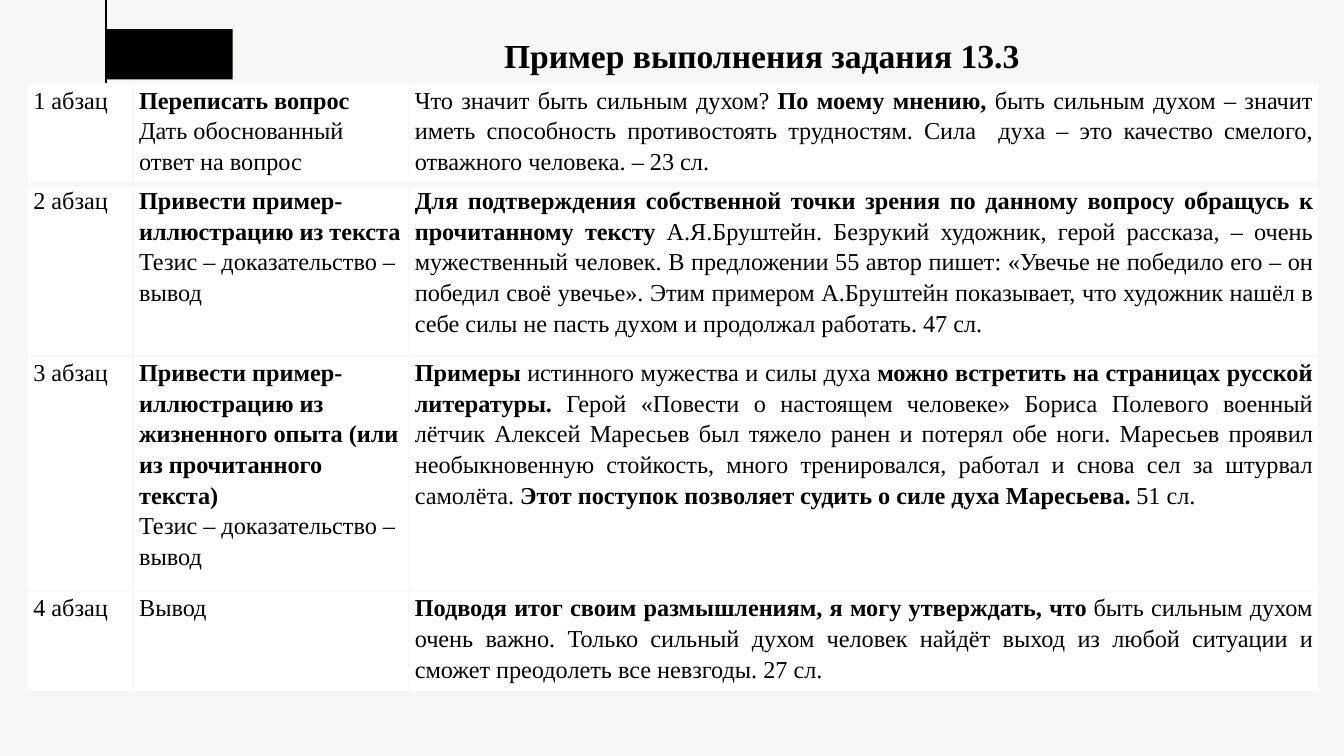
from dataclasses import dataclass

from lxml import etree
from pptx import Presentation
from pptx.dml.color import RGBColor
from pptx.enum import shapes, text
from pptx.oxml import ns
from pptx.util import Cm, Pt


@dataclass(frozen=True)
class Theme:
    font: str = "Times New Roman"
    back: str = "F7F7F6"
    ink: str = "000000"
    cell: str = "FFFFFF"
    head: float = 18
    body: float = 13
    rule: float = 0.75
    edge: float = 1
    thick: float = 3
    lead: float = 1.15


TITLE = "Пример выполнения задания 13.3"

# Each cell is a list of paragraphs; ** switches bold on and off.
ROWS = [
    (
        ["1 абзац"],
        ["**Переписать вопрос**", "Дать обоснованный ответ на вопрос"],
        ["Что значит быть сильным духом? **По моему мнению, **быть сильным духом – "
         "значит иметь способность противостоять трудностям. Сила  духа – это "
         "качество смелого, отважного человека. – 23 сл."],
    ),
    (
        ["2 абзац"],
        ["**Привести пример-иллюстрацию из текста**", "Тезис – доказательство – вывод"],
        ["**Для подтверждения собственной точки зрения по данному вопросу обращусь "
         "к прочитанному тексту **А.Я.Бруштейн. Безрукий художник, герой рассказа, – "
         "очень мужественный человек. В предложении 55 автор пишет: «Увечье не "
         "победило его – он победил своё увечье». Этим примером А.Бруштейн "
         "показывает, что художник нашёл в себе силы не пасть духом и продолжал "
         "работать. 47 сл."],
    ),
    (
        ["3 абзац"],
        ["**Привести пример-иллюстрацию из жизненного опыта (или из прочитанного "
         "текста)**", "Тезис – доказательство – вывод"],
        ["**Примеры** истинного мужества и силы духа **можно встретить на страницах "
         "русской литературы.** Герой «Повести о настоящем человеке» Бориса Полевого "
         "военный лётчик Алексей Маресьев был тяжело ранен и потерял обе ноги. "
         "Маресьев проявил необыкновенную стойкость, много тренировался, работал и "
         "снова сел за штурвал самолёта. **Этот поступок позволяет судить о силе "
         "духа Маресьева. **51 сл."],
    ),
    (
        ["4 абзац"],
        ["Вывод"],
        ["**Подводя итог своим размышлениям, я могу утверждать, что** быть сильным "
         "духом очень важно. Только сильный духом человек найдёт выход из любой "
         "ситуации и сможет преодолеть все невзгоды. 27 сл."],
    ),
]
COLS = [2, 5.21, 17.2]
HIGHS = [1.85, 3.25, 4.45, 1.85]


class Deck:
    def __init__(self, theme):
        self.theme = theme
        self.prs = Presentation()
        self.prs.slide_width, self.prs.slide_height = Cm(25.4), Cm(14.29)
        self.slide = self.prs.slides.add_slide(self.prs.slide_layouts[6])
        self.paint(self.slide.background.fill, theme.back)

    def paint(self, fill, color):
        fill.solid()
        fill.fore_color.rgb = RGBColor.from_string(color)

    def style(self, run, size, bold):
        font = run.font
        font.name, font.size, font.bold = self.theme.font, Pt(size), bold
        font.color.rgb = RGBColor.from_string(self.theme.ink)

    def block(self, x, y, w, h):
        box = self.slide.shapes.add_shape(
            shapes.MSO_SHAPE.RECTANGLE, Cm(x), Cm(y), Cm(w), Cm(h))
        box.shadow.inherit = False
        self.paint(box.fill, self.theme.ink)
        box.line.fill.background()

    def line(self, x1, y1, x2, y2):
        rule = self.slide.shapes.add_connector(
            shapes.MSO_CONNECTOR.STRAIGHT, Cm(x1), Cm(y1), Cm(x2), Cm(y2))
        rule.line.color.rgb = RGBColor.from_string(self.theme.ink)
        rule.line.width = Pt(self.theme.rule)
        etree.SubElement(rule._element.spPr, ns.qn("a:effectLst"))

    def title(self, words, x, y, w, h):
        frame = self.slide.shapes.add_textbox(Cm(x), Cm(y), Cm(w), Cm(h)).text_frame
        frame.word_wrap = True
        frame.text = words
        para = frame.paragraphs[0]
        para.alignment = text.PP_ALIGN.CENTER
        self.style(para.runs[0], self.theme.head, True)

    def border(self, cell, side, width):
        """Draw one cell edge; call before the cell is filled."""
        edge = etree.SubElement(
            cell._tc.get_or_add_tcPr(), ns.qn(f"a:ln{side}"), w=str(Pt(width)))
        fill = etree.SubElement(edge, ns.qn("a:solidFill"))
        etree.SubElement(fill, ns.qn("a:srgbClr"), val=self.theme.back)

    def prose(self, cell, paras, align):
        """Fill a cell with paragraphs, where ** switches bold."""
        frame = cell.text_frame
        for i, words in enumerate(paras):
            para = frame.add_paragraph() if i else frame.paragraphs[0]
            para.alignment, para.line_spacing = align, self.theme.lead
            for j, part in enumerate(words.split("**")):
                if part:
                    run = para.add_run()
                    run.text = part
                    self.style(run, self.theme.body, j % 2 == 1)

    def table(self, rows, x, y, cols, highs):
        grid = self.slide.shapes.add_table(
            len(rows), len(cols), Cm(x), Cm(y), Cm(sum(cols)), Cm(sum(highs))).table
        grid.first_row = grid.horz_banding = False
        for col, wide in zip(grid.columns, cols):
            col.width = Cm(wide)
        for r, (row, high) in enumerate(zip(rows, highs)):
            grid.rows[r].height = Cm(high)
            for c, paras in enumerate(row):
                cell = grid.cell(r, c)
                cell.margin_left = cell.margin_right = Cm(0.12)
                cell.margin_top = cell.margin_bottom = 0
                for side in "LRTB":
                    heavy = (r, side) in ((0, "B"), (1, "T"))
                    self.border(cell, side, self.theme.thick if heavy else self.theme.edge)
                self.paint(cell.fill, self.theme.cell)
                last = c == len(cols) - 1
                self.prose(cell, paras,
                           text.PP_ALIGN.JUSTIFY if last else text.PP_ALIGN.LEFT)


def main():
    deck = Deck(Theme())
    deck.block(2, 0.55, 2.4, 0.95)
    deck.line(2, 12.8, 2, 0)
    deck.title(TITLE, 4.9, 0.53, 19, 1.02)
    deck.table(ROWS, 0.51, 1.58, COLS, HIGHS)
    deck.prs.save("out.pptx")


if __name__ == "__main__":
    main()
